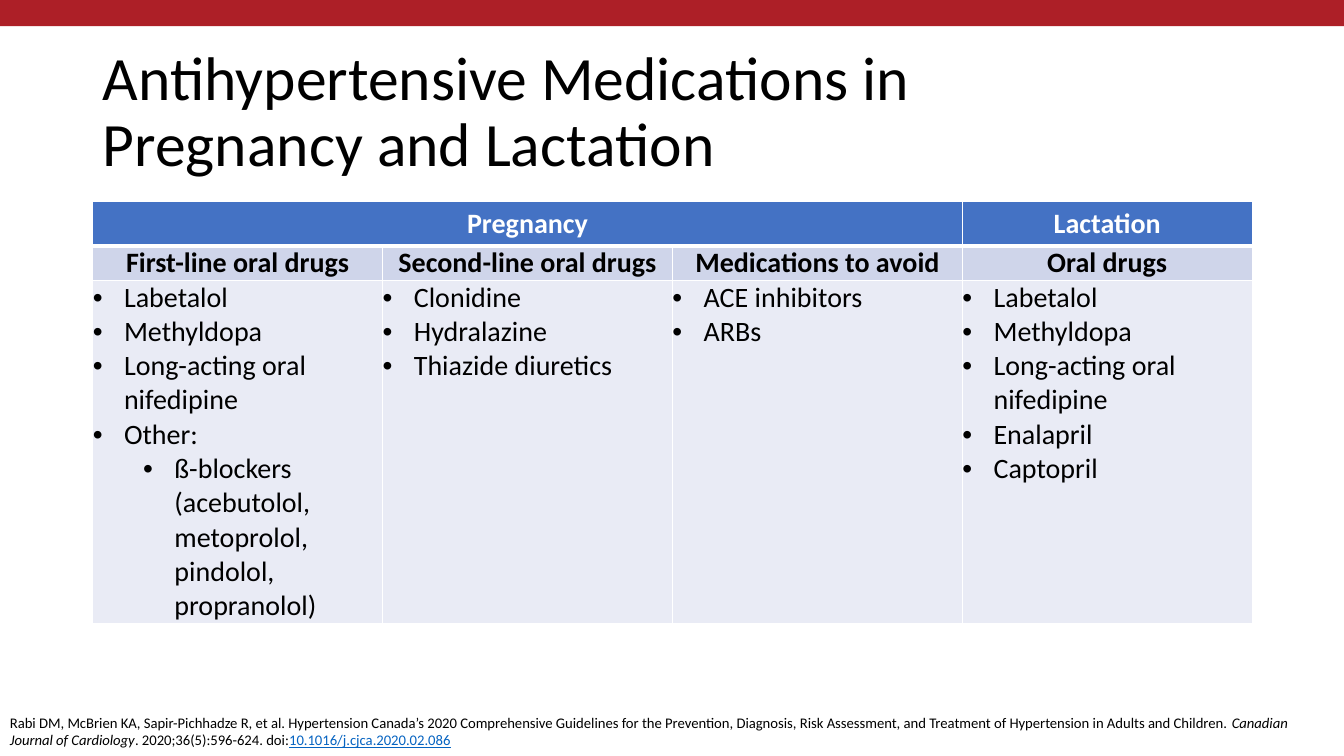
from dataclasses import dataclass

from lxml import etree
from pptx import Presentation
from pptx.dml.color import RGBColor
from pptx.enum import shapes, text
from pptx.oxml import ns
from pptx.util import Inches, Pt


@dataclass(frozen=True)
class Theme:
    font: str = "Calibri"
    title_size: float = 44
    table_size: float = 20
    citation_size: float = 10.5
    black: str = "000000"
    white: str = "FFFFFF"
    red: str = "AD1F27"
    header: str = "4472C4"
    subheader: str = "CFD5EA"
    body: str = "E9EBF5"
    link: str = "0563C1"


THEME = Theme()
GROUPS = [("Pregnancy", 3), ("Lactation", 1)]
# Each column: heading, then (level, drug) items
COLUMNS = [
    ("First-line oral drugs", [
        (0, "Labetalol"), (0, "Methyldopa"), (0, "Long-acting oral nifedipine"), (0, "Other:"),
        (1, "ß-blockers (acebutolol, metoprolol, pindolol, propranolol)")]),
    ("Second-line oral drugs", [(0, "Clonidine"), (0, "Hydralazine"), (0, "Thiazide diuretics")]),
    ("Medications to avoid", [(0, "ACE inhibitors"), (0, "ARBs")]),
    ("Oral drugs", [
        (0, "Labetalol"), (0, "Methyldopa"), (0, "Long-acting oral nifedipine"),
        (0, "Enalapril"), (0, "Captopril")]),
]
ROW_HEIGHTS = [0.43, 0.34, 3.4]


def add_run(p, words, size, color=THEME.black, bold=False, italic=False, underline=False):
    r = p.add_run()
    r.text = words
    f = r.font
    f.name, f.size = THEME.font, Pt(size)
    f.bold, f.italic, f.underline = bold, italic, underline
    f.color.rgb = RGBColor.from_string(color)


def set_bullet(p, level):
    p.level = level
    pPr = p._p.get_or_add_pPr()
    pPr.set("marL", str(Inches(0.31 + 0.5 * level)))
    pPr.set("indent", str(Inches(-0.31)))
    etree.SubElement(pPr, ns.qn("a:buFont"), typeface="Arial")
    etree.SubElement(pPr, ns.qn("a:buChar"), char="•")


def style_cell(cell, fill, top=1, bottom=1):
    """Draw white borders, with widths in points, and fill the cell."""
    tcPr = cell._tc.get_or_add_tcPr()
    for side, width in (("L", 1), ("R", 1), ("T", top), ("B", bottom)):
        ln = etree.SubElement(tcPr, ns.qn("a:ln" + side), w=str(Pt(width)))
        solid = etree.SubElement(ln, ns.qn("a:solidFill"))
        etree.SubElement(solid, ns.qn("a:srgbClr"), val=THEME.white)
    cell.fill.solid()
    cell.fill.fore_color.rgb = RGBColor.from_string(fill)


def clear_margins(cell):
    cell.margin_left = cell.margin_right = cell.margin_top = cell.margin_bottom = 0


def add_heading(cell, words, color):
    p = cell.text_frame.paragraphs[0]
    p.alignment = text.PP_ALIGN.CENTER
    add_run(p, words, THEME.table_size, color, bold=True)


def add_band(s, left, top, width, height):
    band = s.shapes.add_shape(shapes.MSO_SHAPE.RECTANGLE, *map(Inches, (left, top, width, height)))
    band.shadow.inherit = False
    band.fill.solid()
    band.fill.fore_color.rgb = RGBColor.from_string(THEME.red)
    band.line.fill.background()


def add_title(s, left, top, width, height):
    sp = s.shapes.title
    sp.left, sp.top, sp.width, sp.height = map(Inches, (left, top, width, height))
    tf = sp.text_frame
    tf.word_wrap = True
    tf.auto_size = text.MSO_AUTO_SIZE.NONE
    tf.vertical_anchor = text.MSO_ANCHOR.MIDDLE
    p = tf.paragraphs[0]
    p.alignment = text.PP_ALIGN.LEFT
    p.line_spacing = 0.9
    add_run(p, "Antihypertensive Medications in Pregnancy and Lactation", THEME.title_size)


def add_drug_table(s, left, top, width):
    frame = s.shapes.add_table(len(ROW_HEIGHTS), len(COLUMNS),
                               *map(Inches, (left, top, width, sum(ROW_HEIGHTS))))
    table = frame.table
    for column in table.columns:
        column.width = Inches(width / len(COLUMNS))
    for row, height in zip(table.rows, ROW_HEIGHTS):
        row.height = Inches(height)

    for col, (heading, drugs) in enumerate(COLUMNS):
        style_cell(table.cell(0, col), THEME.header, bottom=3)

        cell = table.cell(1, col)
        style_cell(cell, THEME.subheader, top=3)
        clear_margins(cell)
        cell.vertical_anchor = text.MSO_ANCHOR.MIDDLE
        add_heading(cell, heading, THEME.black)

        cell = table.cell(2, col)
        style_cell(cell, THEME.body)
        clear_margins(cell)
        tf = cell.text_frame
        for i, (level, drug) in enumerate(drugs):
            p = tf.add_paragraph() if i else tf.paragraphs[0]
            set_bullet(p, level)
            add_run(p, drug, THEME.table_size)

    col = 0
    for group, span in GROUPS:
        cell = table.cell(0, col)
        if span > 1:
            cell.merge(table.cell(0, col + span - 1))
        add_heading(cell, group, THEME.white)
        col += span


def add_citation(s, left, top, width, height):
    tf = s.shapes.add_textbox(*map(Inches, (left, top, width, height))).text_frame
    tf.word_wrap = True
    tf.auto_size = text.MSO_AUTO_SIZE.SHAPE_TO_FIT_TEXT
    p = tf.paragraphs[0]
    size = THEME.citation_size
    add_run(p, "Rabi DM, McBrien KA, Sapir-Pichhadze R, et al. Hypertension Canada’s 2020 "
               "Comprehensive Guidelines for the Prevention, Diagnosis, Risk Assessment, and "
               "Treatment of Hypertension in Adults and Children. ", size)
    add_run(p, "Canadian Journal of Cardiology", size, italic=True)
    add_run(p, ". 2020;36(5):596-624. doi:", size)
    add_run(p, "10.1016/j.cjca.2020.02.086", size, THEME.link, underline=True)


def main():
    prs = Presentation()
    prs.slide_width, prs.slide_height = Inches(13.33), Inches(7.5)
    s = prs.slides.add_slide(prs.slide_layouts.get_by_name("Title Only"))
    add_band(s, 0, 0, 13.33, 0.26)
    add_title(s, 0.92, 0.4, 10.3, 1.45)
    add_drug_table(s, 0.92, 2, 11.5)
    add_citation(s, 0, 7.03, 13.33, 0.47)
    prs.save("out.pptx")


if __name__ == "__main__":
    main()
